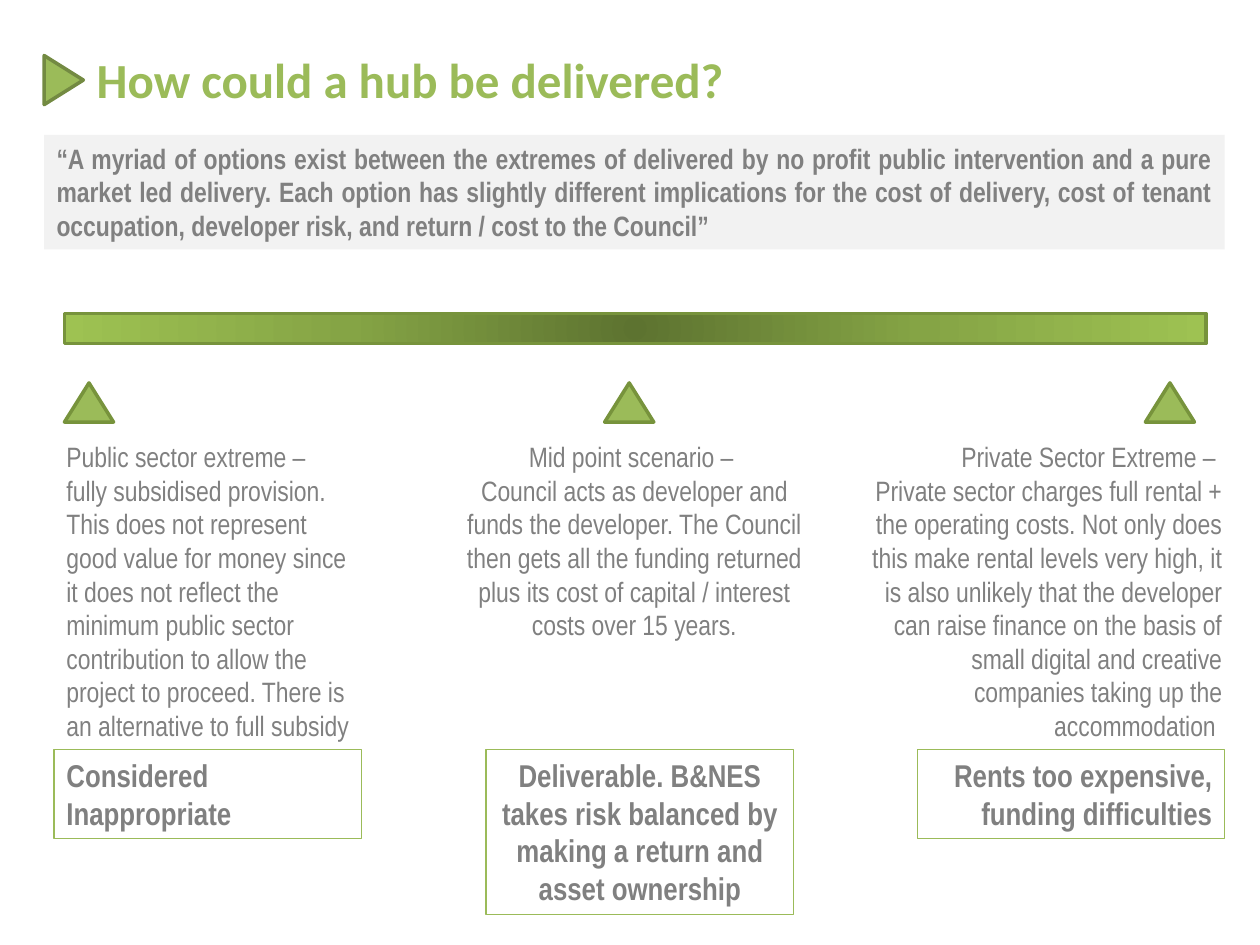
from dataclasses import dataclass

from lxml.etree import SubElement
from pptx import Presentation
from pptx.dml.color import RGBColor
from pptx.enum.shapes import MSO_SHAPE
from pptx.enum.text import MSO_ANCHOR, MSO_AUTO_SIZE, PP_ALIGN
from pptx.oxml.ns import qn
from pptx.util import Cm, Pt


@dataclass(frozen=True)
class Theme:
    green: str = "9BBB59"
    edge: str = "77933C"
    title_edge: str = "738A42"
    grey: str = "808080"
    panel: str = "F2F2F2"
    bar_stops: tuple = ((0, "5D7330"), (50, "85A445"), (100, "9EC252"))
    heading_font: str = "Calibri"
    body_font: str = "Arial Narrow"
    title_size: int = 28
    verdict_size: int = 18
    body_size: int = 16


class SlideBuilder:
    def __init__(self, slide, theme):
        self.slide = slide
        self.theme = theme

    def shape(self, kind, area, fill=None, line=None, width=2):
        shape = self.slide.shapes.add_shape(kind, *map(Cm, area))
        shape.shadow.inherit = False
        if fill:
            shape.fill.solid()
            shape.fill.fore_color.rgb = RGBColor.from_string(fill)
        else:
            shape.fill.background()
        if line:
            shape.line.color.rgb = RGBColor.from_string(line)
            shape.line.width = Pt(width)
        else:
            shape.line.fill.background()
        return shape

    def triangle(self, left, top, line, rotation=0):
        shape = self.shape(MSO_SHAPE.ISOSCELES_TRIANGLE, (left, top, 0.99, 0.79),
                           self.theme.green, line)
        shape.rotation = rotation

    def gradient_bar(self, area):
        bar = self.shape(MSO_SHAPE.RECTANGLE, area, line=self.theme.edge)
        bar.fill.gradient()
        gradient = bar._element.spPr.find(qn("a:gradFill"))
        for child in list(gradient):
            gradient.remove(child)
        stops = SubElement(gradient, qn("a:gsLst"))
        for position, color in self.theme.bar_stops:
            stop = SubElement(stops, qn("a:gs"), pos=str(position * 1000))
            SubElement(stop, qn("a:srgbClr"), val=color)
        circle = SubElement(gradient, qn("a:path"), path="circle")
        SubElement(circle, qn("a:fillToRect"),
                   {side: "50000" for side in "ltrb"})

    def text_box(self, area, paragraphs, **style):
        box = self.slide.shapes.add_textbox(*map(Cm, area))
        self.set_text(box, paragraphs, **style)

    def panel(self, area, paragraphs, fill=None, line=None, **style):
        box = self.shape(MSO_SHAPE.RECTANGLE, area, fill, line, 0.75)
        self.set_text(box, paragraphs, **style)

    def set_text(self, box, paragraphs, align=PP_ALIGN.LEFT, anchor=MSO_ANCHOR.TOP,
                 fit=MSO_AUTO_SIZE.SHAPE_TO_FIT_TEXT, color=None, **font):
        frame = box.text_frame
        frame_format = {"word_wrap": True, "auto_size": fit, "vertical_anchor": anchor}
        for name, value in frame_format.items():
            setattr(frame, name, value)
        font_format = {"name": self.theme.body_font,
                       "size": Pt(self.theme.body_size), "bold": False} | font
        for index, text in enumerate(paragraphs):
            para = frame.add_paragraph() if index else frame.paragraphs[0]
            para.alignment = align
            span = para.add_run()
            span.text = text
            for name, value in font_format.items():
                setattr(span.font, name, value)
            span.font.color.rgb = RGBColor.from_string(color or self.theme.grey)


# Scenarios: marker left, text area, verdict area, alignment, text, verdict
SCENARIOS = [
    (1.3, (1.09, 8.74, 6.2, 6.4), (1.09, 15.11, 6.2, 1.8), PP_ALIGN.LEFT,
     ["Public sector extreme – fully subsidised provision. This does not represent "
      "good value for money since it does not reflect the minimum public sector "
      "contribution to allow the project to proceed. There is an alternative to "
      "full subsidy"],
     "Considered Inappropriate"),
    (12.19, (8.89, 8.74, 7.8, 4.37), (9.8, 15.11, 6.2, 3.33), PP_ALIGN.CENTER,
     ["Mid point scenario – ",
      "Council acts as developer and funds the developer. The Council then gets all "
      "the funding returned plus its cost of capital / interest costs over 15 years."],
     "Deliverable. B&NES takes risk balanced by making a return and asset ownership"),
    (23.09, (17.09, 8.74, 7.8, 6.4), (18.49, 15.11, 6.2, 1.8), PP_ALIGN.RIGHT,
     ["Private Sector Extreme – ",
      "Private sector charges full rental + the operating costs. Not only does this "
      "make rental levels very high, it is also unlikely that the developer can raise "
      "finance on the basis of small digital and creative companies taking up the "
      "accommodation "],
     "Rents too expensive, funding difficulties"),
]


def main():
    theme = Theme()
    deck = Presentation()
    deck.slide_width, deck.slide_height = Cm(25.4), Cm(19.05)
    builder = SlideBuilder(deck.slides.add_slide(deck.slide_layouts[6]), theme)

    # Title
    builder.text_box((1.7, 0, 23.7, 3.18), ["How could a hub be delivered?"],
                     anchor=MSO_ANCHOR.MIDDLE, fit=MSO_AUTO_SIZE.NONE,
                     color=theme.green, name=theme.heading_font,
                     size=Pt(theme.title_size), bold=True)
    builder.triangle(0.79, 1.22, theme.title_edge, rotation=90)

    # Quotation
    builder.panel((0.89, 2.72, 23.8, 2.31),
                  ["“A myriad of options exist between the extremes of delivered by no "
                   "profit public intervention and a pure market led delivery. Each option "
                   "has slightly different implications for the cost of delivery, cost of "
                   "tenant occupation, developer risk, and return / cost to the Council” "],
                  fill=theme.panel, align=PP_ALIGN.JUSTIFY, bold=True)

    # Spectrum with its three scenarios
    builder.gradient_bar((1.3, 6.32, 23.01, 0.61))
    for marker_left, text_area, verdict_area, align, text, verdict in SCENARIOS:
        builder.triangle(marker_left, 7.72, theme.edge)
        builder.text_box(text_area, text, align=align)
        builder.panel(verdict_area, [verdict], line=theme.green, align=align,
                      size=Pt(theme.verdict_size), bold=True)

    deck.save("out.pptx")


if __name__ == "__main__":
    main()
